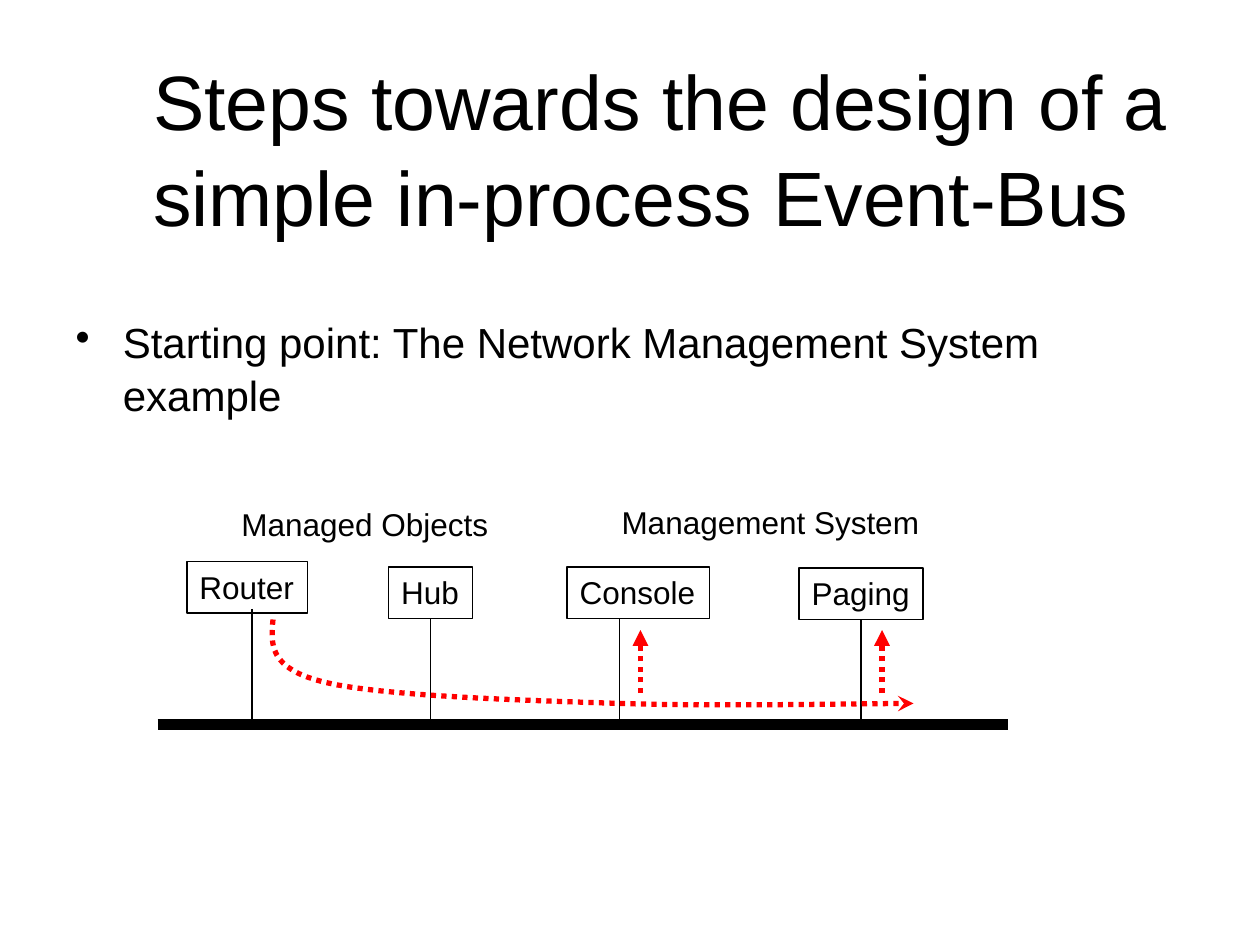
import pptx
import pptx.util
import pptx.dml.color
import pptx.enum.dml
import pptx.enum.shapes
import pptx.enum.text
import pptx.oxml.ns
from lxml import etree

# Colours are RRGGBB, type sizes and line widths are points
THEME = {
    "font": "Arial", "ink": "000000", "flow": "FF0000",
    "title": 44, "body": 24, "label": 18,
    "thin": 0.75, "dots": 3, "bus": 6, "lead": 1.04,
}
COLS, ROWS = 120, 90  # the slide is a grid of 1/12 inch cells
BUS = 69              # row of the bus
FLOOR = 59            # row where the drops leave the boxes


def grid(*cells):
    return [pptx.util.Inches(cell / 12) for cell in cells]


def color(name):
    return pptx.dml.color.RGBColor.from_string(THEME[name])


def setall(item, values):
    for name, value in values.items():
        setattr(item, name, value)


def write(shape, text, size, lead=1.0, inset=1.2, wrap=False,
          anchor=pptx.enum.text.MSO_ANCHOR.TOP):
    frame = shape.text_frame
    side, edge = grid(inset, 0.6)
    setall(frame, {
        "word_wrap": wrap, "auto_size": pptx.enum.text.MSO_AUTO_SIZE.NONE,
        "vertical_anchor": anchor, "margin_left": side,
        "margin_top": edge, "margin_bottom": edge,
    })
    para = frame.paragraphs[0]
    para.text = text
    setall(para, {"alignment": pptx.enum.text.PP_ALIGN.LEFT,
                  "line_spacing": lead})
    for run in para.runs:
        setall(run.font, {"name": THEME["font"],
                          "size": pptx.util.Pt(THEME[size])})
        run.font.color.rgb = color("ink")
    return para


def label(slide, place, text, size="label", **form):
    return write(slide.shapes.add_textbox(*grid(*place)), text, size, **form)


def bullet(para):
    props = para._p.get_or_add_pPr()
    for name, value in {"marL": 342900, "indent": -342900}.items():
        props.set(name, str(value))
    mark = etree.SubElement(props, pptx.oxml.ns.qn("a:buChar"))
    mark.set("char", "•")


def stroke(line, tint, width, head=None):
    line.color.rgb = color(tint)
    line.width = pptx.util.Pt(THEME[width])
    if head:
        line.dash_style = pptx.enum.dml.MSO_LINE.ROUND_DOT
        tail = etree.SubElement(line._get_or_add_ln(),
                                pptx.oxml.ns.qn("a:tailEnd"))
        tail.set("type", head)


def box(slide, place, text):
    shape = slide.shapes.add_shape(
        pptx.enum.shapes.MSO_SHAPE.RECTANGLE, *grid(*place))
    shape.shadow.inherit = False
    shape.fill.background()
    stroke(shape.line, "ink", "thin")
    write(shape, text, "label")
    return shape


def link(slide, start, end, tint="ink", width="thin", head=None):
    line = slide.shapes.add_connector(
        pptx.enum.shapes.MSO_CONNECTOR.STRAIGHT, *grid(*start, *end))
    stroke(line.line, tint, width, head)
    etree.SubElement(line._element.spPr, pptx.oxml.ns.qn("a:effectLst"))
    return line


def bend(start, curves, steps=16):
    """Points along a chain of cubic curves."""
    for one, two, end in curves:
        for step in range(1, steps + 1):
            t = step / steps
            u = 1 - t
            yield grid(*(u**3 * a + 3 * u * u * t * b + 3 * u * t * t * c
                         + t**3 * d
                         for a, b, c, d in zip(start, one, two, end)))
        start = end


def flow(slide, start, curves):
    pen = slide.shapes.build_freeform(*grid(*start))
    pen.add_line_segments(list(bend(start, curves)), close=False)
    shape = pen.convert_to_shape()
    shape.shadow.inherit = False
    shape.fill.background()
    stroke(shape.line, "flow", "dots", "stealth")


def main():
    deck = pptx.Presentation()
    deck.slide_width, deck.slide_height = grid(COLS, ROWS)
    slide = deck.slides.add_slide(deck.slide_layouts[6])

    # Heading and bullet
    label(slide, (6, 6.4, 114, 15),
          "Steps towards the design of a\vsimple in-process Event-Bus",
          "title", lead=THEME["lead"], inset=8.6, wrap=True,
          anchor=pptx.enum.text.MSO_ANCHOR.MIDDLE)
    bullet(label(slide, (6, 29.4, 108, 53),
                 "Starting point: The Network Management System example",
                 "body", lead=THEME["lead"], wrap=True))

    # Group names
    label(slide, (21.8, 47.5, 25.9, 4.8), "Managed Objects")
    label(slide, (58, 47.3, 30.7, 4.8), "Management System")

    # Bus, boxes and their drops; a centred drop is joined to its box
    link(slide, (15, BUS), (96, BUS), width="bus")
    for text, left, top, width, drop, start, joined in (
            ("Router", 17.8, 53.5, 11.5, 24, 58, False),
            ("Hub", 37, 54, 8, 41, FLOOR, True),
            ("Console", 54, 54, 13.6, 59, FLOOR, False),
            ("Paging", 76.1, 54.1, 11.8, 82, FLOOR, True)):
        node = box(slide, (left, top, width, 4.9), text)
        line = link(slide, (drop, start), (drop, BUS))
        if joined:
            line.begin_connect(node, 2)

    # Event flow from the router to the management system
    flow(slide, (26, FLOOR), (
        ((25.8, 61.3), (25.5, 63.7), (31, 65)),
        ((36.5, 66.3), (49.7, 66.7), (59, 67)),
        ((68.3, 67.3), (82.3, 67), (87, 67))))
    for col in (61, 84):
        link(slide, (col, 66), (col, 60), "flow", "dots", "triangle")

    deck.save("out.pptx")


if __name__ == "__main__":
    main()
